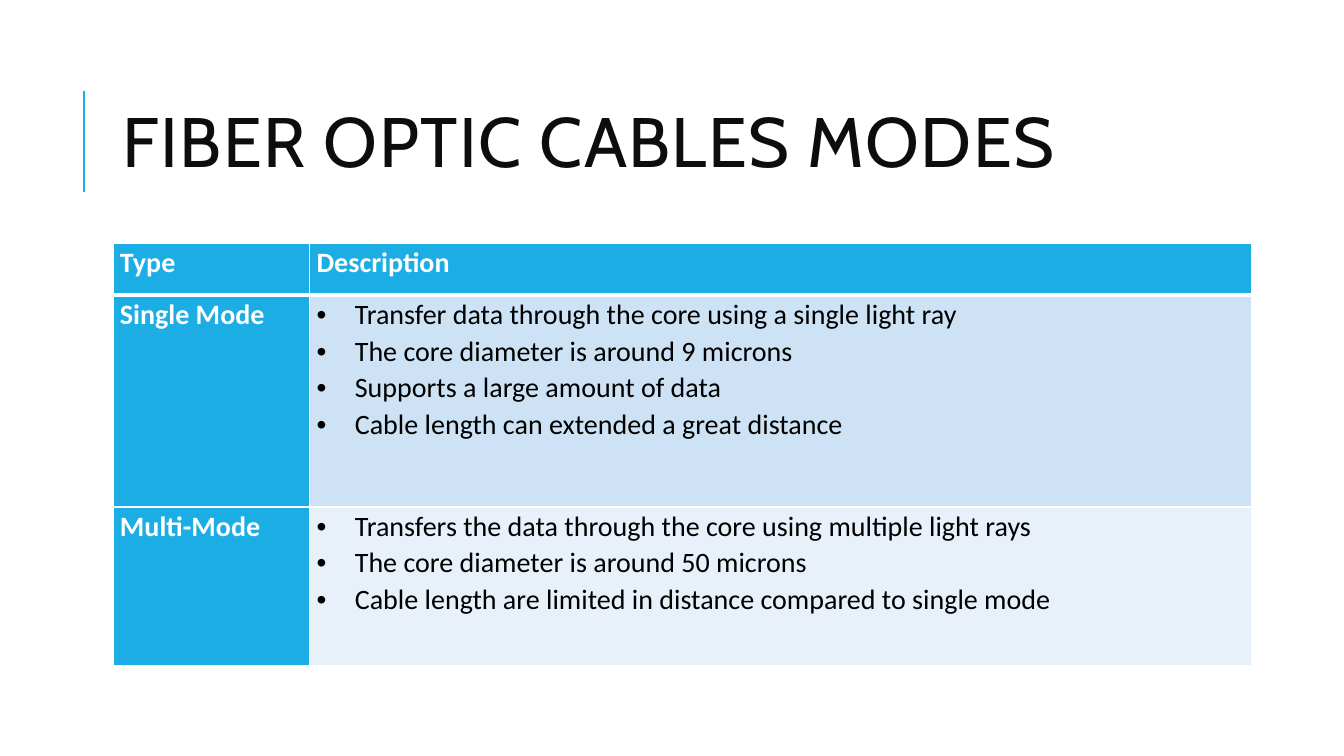
from lxml.etree import SubElement
from pptx import Presentation
from pptx.dml.color import RGBColor
from pptx.enum.shapes import MSO_CONNECTOR
from pptx.enum.text import MSO_ANCHOR
from pptx.oxml import parse_xml
from pptx.oxml.ns import nsdecls, qn
from pptx.util import Inches, Pt

TITLE = "FIBER OPTIC CABLES MODES"
HEADINGS = ("Type", "Description")
MODES = [
    ("Single Mode", [
        "Transfer data through the core using a single light ray",
        "The core diameter is around 9 microns",
        "Supports a large amount of data",
        "Cable length can extended a great distance",
    ]),
    ("Multi-Mode", [
        "Transfers the data through the core using multiple light rays",
        "The core diameter is around 50 microns",
        "Cable length are limited in distance compared to single mode",
    ]),
]
COLUMN_WIDTHS = (1.95, 9.34)
ROW_HEIGHTS = (0.52, 2.1, 1.57)
LEFT = 1.12
TABLE_TOP = 2.41

THEME = {
    "accent": "1CADE4",
    "bands": ("CDE3F5", "E8F1FA"),
    "white": "FFFFFF",
    "body": "000000",
    "title": "0D0D0D",
    "title_font": "Cabin",
    "body_font": "Calibri",
    "title_size": 50,
    "body_size": 20,
}


def add_run(paragraph, text, font_name, size, color, bold=False):
    run = paragraph.add_run()
    run.text = text
    run.font.name = font_name
    run.font.size = Pt(size)
    run.font.bold = bold
    run.font.color.rgb = RGBColor.from_string(color)
    return run


def set_borders(cell, bottom_width):
    widths = {"lnL": 1, "lnR": 1, "lnT": 1, "lnB": bottom_width}
    properties = cell._tc.get_or_add_tcPr()
    for index, (side, width) in enumerate(widths.items()):
        properties.insert(index, parse_xml(
            f'<a:{side} {nsdecls("a")} w="{Pt(width)}"><a:solidFill>'
            f'<a:srgbClr val="{THEME["white"]}"/></a:solidFill></a:{side}>'))


def add_bullet(paragraph):
    properties = paragraph._p.get_or_add_pPr()
    properties.set("marL", str(Inches(0.38)))
    properties.set("indent", str(Inches(-0.38)))
    SubElement(properties, qn("a:buFont"), typeface="Arial")
    SubElement(properties, qn("a:buChar"), char="•")


def fill_cell(cell, lines, fill, color, bold, bulleted=False, bottom_width=1):
    cell.fill.solid()
    cell.fill.fore_color.rgb = RGBColor.from_string(fill)
    cell.margin_left = cell.margin_right = Inches(0.07)
    cell.margin_top = cell.margin_bottom = 0
    set_borders(cell, bottom_width)
    frame = cell.text_frame
    for index, line in enumerate(lines):
        paragraph = frame.add_paragraph() if index else frame.paragraphs[0]
        if bulleted:
            add_bullet(paragraph)
        paragraph.line_spacing = 1.07
        add_run(paragraph, line, THEME["body_font"], THEME["body_size"], color, bold)


def add_title(slide):
    accent_line = slide.shapes.add_connector(
        MSO_CONNECTOR.STRAIGHT, Inches(0.83), Inches(1.9), Inches(0.83), Inches(0.9))
    accent_line.line.color.rgb = RGBColor.from_string(THEME["accent"])
    accent_line.line.width = Pt(1.5)
    SubElement(accent_line._element.spPr, qn("a:effectLst"))

    title = slide.shapes.add_textbox(
        Inches(LEFT), Inches(0.64), Inches(10.63), Inches(1.64))
    frame = title.text_frame
    frame.word_wrap = True
    frame.vertical_anchor = MSO_ANCHOR.MIDDLE
    paragraph = frame.paragraphs[0]
    paragraph.line_spacing = 0.8
    run = add_run(paragraph, TITLE, THEME["title_font"], THEME["title_size"], THEME["title"])
    run._r.get_or_add_rPr().set("spc", "100")


def add_modes_table(slide):
    table = slide.shapes.add_table(
        len(ROW_HEIGHTS), len(COLUMN_WIDTHS), Inches(LEFT), Inches(TABLE_TOP),
        Inches(sum(COLUMN_WIDTHS)), Inches(sum(ROW_HEIGHTS))).table
    for column, width in zip(table.columns, COLUMN_WIDTHS):
        column.width = Inches(width)
    for row, height in zip(table.rows, ROW_HEIGHTS):
        row.height = Inches(height)

    accent, white = THEME["accent"], THEME["white"]
    for column, heading in enumerate(HEADINGS):
        fill_cell(table.cell(0, column), [heading], accent, white, True, bottom_width=3)
    for row, ((mode, facts), band) in enumerate(zip(MODES, THEME["bands"]), start=1):
        fill_cell(table.cell(row, 0), [mode], accent, white, True,)
        fill_cell(table.cell(row, 1), facts, band, THEME["body"], False, bulleted=True)
    for column in range(len(HEADINGS)):
        top_border = table.cell(1, column)._tc.tcPr.find(qn("a:lnT"))
        top_border.set("w", str(Pt(3)))


def main():
    presentation = Presentation()
    presentation.slide_width = Inches(13.33)
    presentation.slide_height = Inches(7.5)
    slide = presentation.slides.add_slide(presentation.slide_layouts[6])
    add_title(slide)
    add_modes_table(slide)
    presentation.save("out.pptx")


if __name__ == "__main__":
    main()
